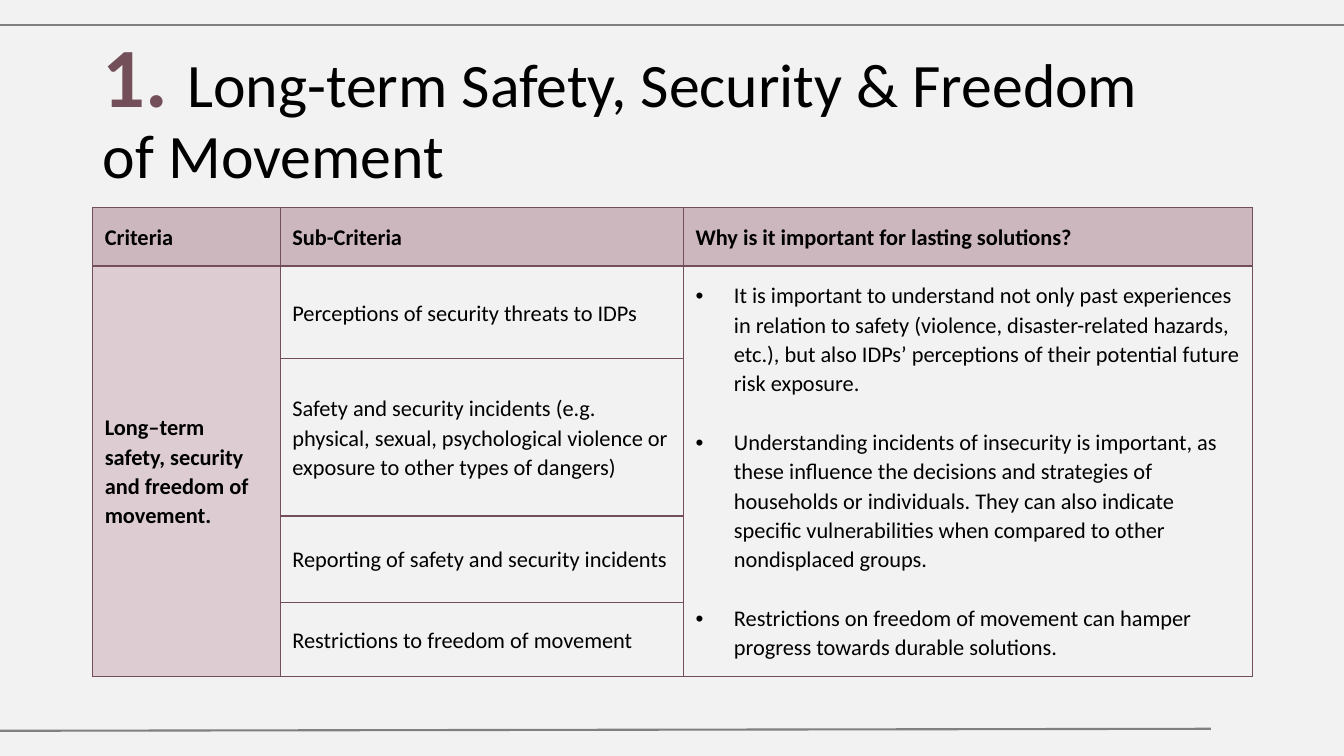
"""Build a slide on long-term safety, security and freedom of movement."""
import pptx
import pptx.util
import pptx.dml.color
import pptx.enum.text
import pptx.enum.shapes
import pptx.oxml
import pptx.oxml.ns
from dataclasses import dataclass

TITLE = ("1. ", "Long-term Safety, Security & Freedom of Movement")
HEADS = ["Criteria", "Sub-Criteria", "Why is it important for lasting solutions?"]
TOPIC = "Long–term safety, security and freedom of movement."
SUBS = [
    "Perceptions of security threats to IDPs",
    "Safety and security incidents (e.g. physical, sexual, psychological violence or exposure to other types of dangers)",
    "Reporting of safety and security incidents",
    "Restrictions to freedom of movement",
]
REASONS = [
    "It is important to understand not only past experiences in relation to safety (violence, disaster-related hazards, etc.), but also IDPs’ perceptions of their potential future risk exposure.",
    "Understanding incidents of insecurity is important, as these influence the decisions and strategies of households or individuals. They can also indicate specific vulnerabilities when compared to other nondisplaced groups.",
    "Restrictions on freedom of movement can hamper progress towards durable solutions.",
]
WIDE, HIGH = 13.33, 7.5
LEFT = 0.92
COLS = [1.86, 4, 5.64]
ROWS = [0.58, 0.92, 1.56, 0.86, 0.73]
RULES = [(0, 0.25, WIDE, 0.25), (0, 7.25, 12.01, 7.23)]


@dataclass(frozen=True)
class Theme:
    back: str = "F2F2F2"
    ink: str = "000000"
    plum: str = "734F5A"
    head: str = "CDB7BE"
    side: str = "DDCDD2"
    rule: str = "808080"
    font: str = "Calibri"
    mark: float = 60.3
    title: float = 44.1
    body: float = 16


LOOK = Theme()
Inch = pptx.util.Inches
Pt = pptx.util.Pt
Middle = pptx.enum.text.MSO_ANCHOR.MIDDLE


def tint(code):
    return pptx.dml.color.RGBColor.from_string(code)


def node(xml):
    space = pptx.oxml.ns.nsdecls("a")
    return pptx.oxml.parse_xml(xml.replace("NS", space, 1))


def put(para, text, size=LOOK.body, color=LOOK.ink, bold=False,
        line=1.07, after=8, bullet=False):
    if bullet:
        props = para._p.get_or_add_pPr()
        props.set("marL", str(Inch(0.38)))
        props.set("indent", str(-Inch(0.38)))
        props.append(node('<a:buFont NS typeface="Arial"/>'))
        props.append(node('<a:buChar NS char="•"/>'))
    para.alignment = pptx.enum.text.PP_ALIGN.LEFT
    para.line_spacing = line
    para.space_before = Pt(0)
    para.space_after = Pt(after)
    run = para.add_run()
    run.text = text
    run.font.name = LOOK.font
    run.font.size = Pt(size)
    run.font.bold = bold
    run.font.color.rgb = tint(color)


def frame(cell, fill):
    cell.vertical_anchor = Middle
    cell.margin_left = cell.margin_right = Inch(0.12)
    cell.margin_top = cell.margin_bottom = Inch(0.08)
    if fill:
        cell.fill.solid()
        cell.fill.fore_color.rgb = tint(fill)
    else:
        cell.fill.background()
    props = cell._tc.get_or_add_tcPr()
    for spot, edge in enumerate(("lnL", "lnR", "lnT", "lnB")):
        props.insert(spot, node(
            f'<a:{edge} NS w="{Pt(1)}"><a:solidFill><a:srgbClr val="{LOOK.plum}"/>'
            f'</a:solidFill></a:{edge}>'))


def rules(slide):
    kind = pptx.enum.shapes.MSO_CONNECTOR.STRAIGHT
    for ends in RULES:
        rule = slide.shapes.add_connector(kind, *map(Inch, ends))
        rule.line.color.rgb = tint(LOOK.rule)
        rule.line.width = Pt(1.5)
        rule._element.spPr.append(node("<a:effectLst NS/>"))


def title(slide):
    box = slide.shapes.title
    box.left, box.top, box.width, box.height = map(Inch, (LEFT, 0.4, 10.5, 1.45))
    text = box.text_frame
    text.auto_size = pptx.enum.text.MSO_AUTO_SIZE.NONE
    text.word_wrap = True
    text.vertical_anchor = Middle
    para = text.paragraphs[0]
    put(para, TITLE[0], size=LOOK.mark, color=LOOK.plum, bold=True, line=0.9, after=0)
    put(para, TITLE[1], size=LOOK.title, line=0.9, after=0)


def grid(slide):
    table = slide.shapes.add_table(
        len(ROWS), len(COLS), Inch(LEFT), Inch(2.06),
        Inch(sum(COLS)), Inch(sum(ROWS))).table
    table.first_row = table.horz_banding = False
    for col, width in zip(table.columns, COLS):
        col.width = Inch(width)
    for row, height in zip(table.rows, ROWS):
        row.height = Inch(height)
    for r in range(len(ROWS)):
        for c in range(len(COLS)):
            frame(table.cell(r, c), LOOK.head if r == 0 else LOOK.side if c == 0 else None)
    for c in (0, 2):
        table.cell(1, c).merge(table.cell(len(SUBS), c))
    for c, text in enumerate(HEADS):
        put(table.cell(0, c).text_frame.paragraphs[0], text, bold=True)
    put(table.cell(1, 0).text_frame.paragraphs[0], TOPIC, bold=True)
    for r, text in enumerate(SUBS, 1):
        put(table.cell(r, 1).text_frame.paragraphs[0], text)
    body = table.cell(1, 2).text_frame
    for i, text in enumerate(REASONS):
        para = body.add_paragraph() if i else body.paragraphs[0]
        put(para, text, bullet=True, after=8 if text == REASONS[-1] else 21)


def main():
    deck = pptx.Presentation()
    deck.slide_width, deck.slide_height = Inch(WIDE), Inch(HIGH)
    slide = deck.slides.add_slide(deck.slide_layouts[5])
    slide.background.fill.solid()
    slide.background.fill.fore_color.rgb = tint(LOOK.back)
    rules(slide)
    title(slide)
    grid(slide)
    deck.save("out.pptx")


if __name__ == "__main__":
    main()
